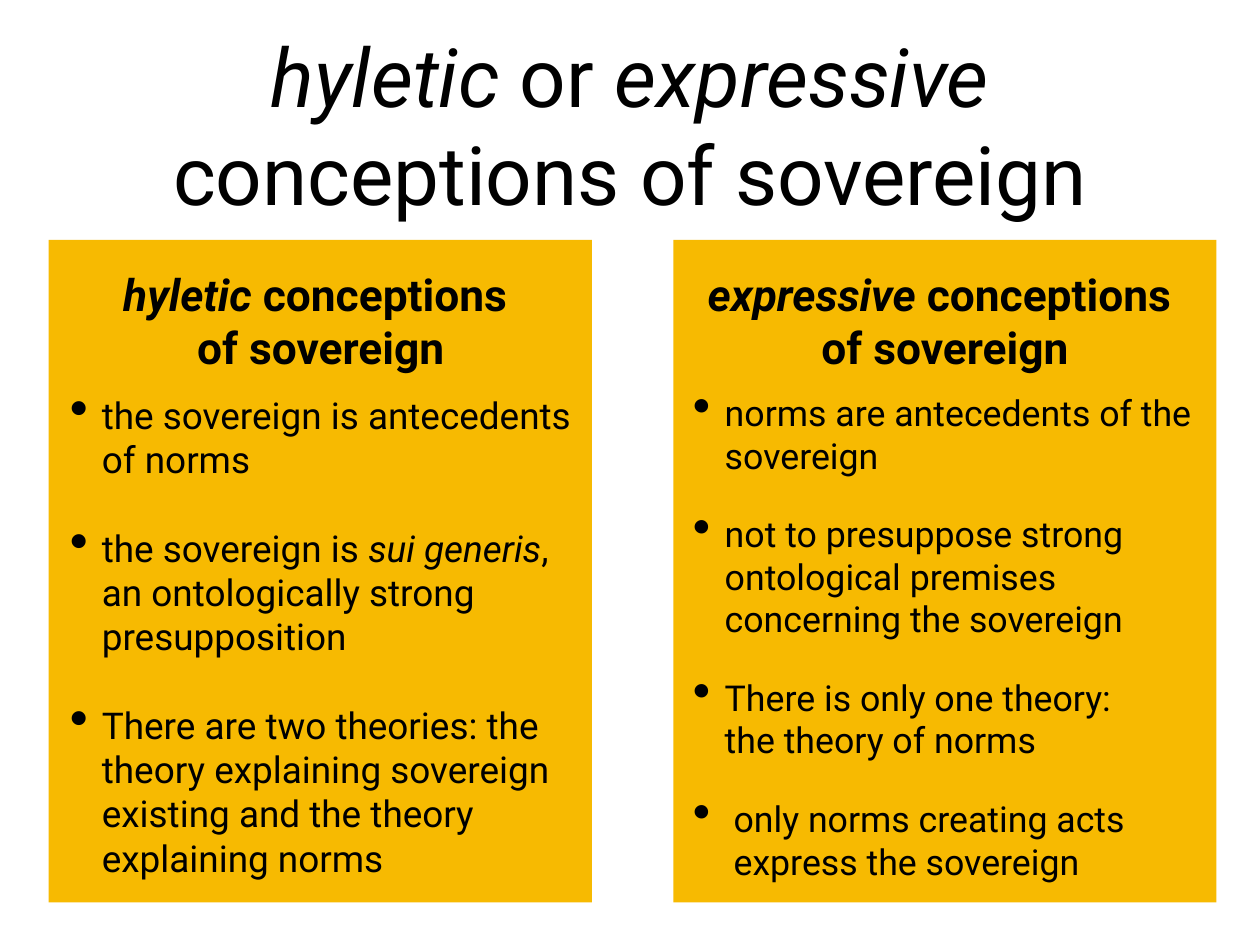
from dataclasses import dataclass

from lxml.etree import SubElement
from pptx import Presentation
from pptx.dml.color import RGBColor
from pptx.enum.shapes import MSO_SHAPE
from pptx.enum.text import MSO_ANCHOR, MSO_AUTO_SIZE, PP_ALIGN
from pptx.oxml.ns import qn
from pptx.util import Inches, Pt


@dataclass(frozen=True)
class Theme:
    font: str = "Roboto"
    ink: RGBColor = RGBColor(0x00, 0x00, 0x00)
    panel: RGBColor = RGBColor(0xF7, 0xBA, 0x01)
    title_size: float = 66.4
    heading_size: float = 36
    bullet_percent: int = 145
    inset: float = 0.06


class SlideBuilder:
    def __init__(self, slide, theme):
        self.slide = slide
        self.theme = theme

    def panel(self, left, top, width, height):
        shape = self.slide.shapes.add_shape(
            MSO_SHAPE.RECTANGLE, Inches(left), Inches(top), Inches(width), Inches(height)
        )
        shape.shadow.inherit = False
        shape.fill.solid()
        shape.fill.fore_color.rgb = self.theme.panel
        shape.line.fill.background()

    def text_frame(self, box, **frame_format):
        left, top, width, height = map(Inches, box)
        frame = self.slide.shapes.add_textbox(left, top, width, height).text_frame
        inset = Inches(self.theme.inset)
        settings = {
            "margin_left": inset,
            "margin_right": inset,
            "margin_top": inset,
            "margin_bottom": inset,
            "word_wrap": True,
            "vertical_anchor": MSO_ANCHOR.MIDDLE,
        }
        for name, value in {**settings, **frame_format}.items():
            setattr(frame, name, value)
        return frame

    def add_styled_text(self, paragraph, text, size, bold=False):
        """Fill a paragraph; *stars* mark italics and a newline is a line break."""
        for line_number, line in enumerate(text.split("\n")):
            if line_number:
                paragraph.add_line_break()
            for part_number, part in enumerate(line.split("*")):
                if not part:
                    continue
                run = paragraph.add_run()
                run.text = part
                font_format = {
                    "name": self.theme.font,
                    "size": Pt(size),
                    "bold": bold,
                    "italic": part_number % 2 == 1,
                }
                for name, value in font_format.items():
                    setattr(run.font, name, value)
                run.font.color.rgb = self.theme.ink

    def title(self, text, box):
        paragraph = self.text_frame(box).paragraphs[0]
        paragraph.alignment = PP_ALIGN.CENTER
        self.add_styled_text(paragraph, text, self.theme.title_size)

    def heading(self, text, box):
        frame = self.text_frame(
            box, word_wrap=False, auto_size=MSO_AUTO_SIZE.SHAPE_TO_FIT_TEXT
        )
        paragraph = frame.paragraphs[0]
        paragraph.alignment = PP_ALIGN.CENTER
        self.add_styled_text(paragraph, text, self.theme.heading_size, bold=True)

    def bullets(self, items, box, size, gap):
        """Add (text, indent) items, with a gap in points between them."""
        frame = self.text_frame(box, vertical_anchor=MSO_ANCHOR.TOP)
        for number, (text, indent) in enumerate(items):
            paragraph = frame.add_paragraph() if number else frame.paragraphs[0]
            paragraph.space_before = Pt(gap if number else 0)
            self.add_bullet(paragraph, indent)
            self.add_styled_text(paragraph, text, size)

    def add_bullet(self, paragraph, indent):
        properties = paragraph._p.get_or_add_pPr()
        properties.set("marL", str(Inches(indent)))
        properties.set("indent", str(-Inches(indent)))
        percent = str(self.theme.bullet_percent * 1000)
        SubElement(properties, qn("a:buSzPct"), val=percent)
        SubElement(properties, qn("a:buChar"), char="•")


INDENT = 0.36
PANEL_TOP, PANEL_WIDTH, PANEL_HEIGHT = 2.71, 6.13, 7.48

COLUMNS = [
    {
        "panel_left": 0.55,
        "heading": "*hyletic *conceptions \nof sovereign",
        "heading_box": (1.09, 2.96, 5.06, 1.32),
        "bullet_box": (0.73, 4.37, 5.78, 6),
        "size": 30,
        "gap": 36,
        "items": [
            ("the sovereign is antecedents of norms", INDENT),
            ("the sovereign is *sui generis*, an ontologically strong presupposition", INDENT),
            (
                "There are two theories: the theory explaining sovereign "
                "existing and the theory explaining norms",
                INDENT,
            ),
        ],
    },
    {
        "panel_left": 7.6,
        "heading": "*expressive *conceptions \nof sovereign",
        "heading_box": (7.66, 2.96, 6.01, 1.32),
        "bullet_box": (7.76, 4.35, 5.8, 5.68),
        "size": 29,
        "gap": 28.8,
        "items": [
            ("norms are antecedents of the sovereign", INDENT),
            (
                "not to presuppose strong ontological premises concerning the sovereign",
                INDENT,
            ),
            ("There is only one theory:\nthe theory of norms", INDENT),
            ("only norms creating acts express the sovereign", 0.46),
        ],
    },
]


def main():
    presentation = Presentation()
    presentation.slide_width = Inches(14.22)
    presentation.slide_height = Inches(10.67)
    slide = presentation.slides.add_slide(presentation.slide_layouts[6])
    builder = SlideBuilder(slide, Theme())

    builder.title(
        "*hyletic *or *expressive* conceptions of sovereign", (1.04, 0.22, 12.14, 2.36)
    )
    for column in COLUMNS:
        builder.panel(column["panel_left"], PANEL_TOP, PANEL_WIDTH, PANEL_HEIGHT)
        builder.heading(column["heading"], column["heading_box"])
        builder.bullets(
            column["items"], column["bullet_box"], column["size"], column["gap"]
        )
    presentation.save("out.pptx")


if __name__ == "__main__":
    main()
